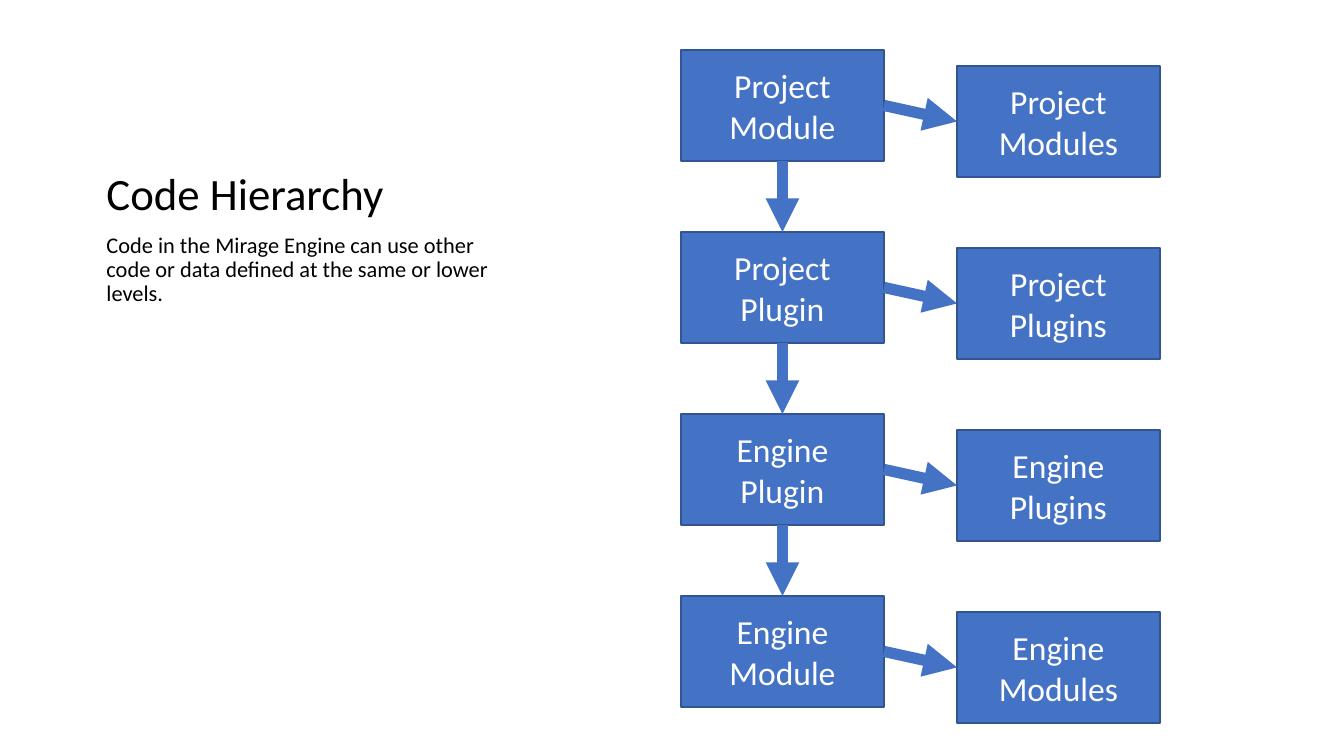
from dataclasses import dataclass

from pptx import Presentation
from pptx import util as u
from pptx.dml.color import RGBColor
from pptx.enum import shapes, text
from pptx.oxml.ns import qn
from pptx.shapes.autoshape import Shape
from pptx.slide import Slide
from pptx.text.text import _Paragraph as Paragraph

WIDTH, HEIGHT = 1344, 756
EMU_PER_PX = u.Inches(10) / WIDTH
COLORS = {"box": "4472C4", "border": "325491", "dark": "000000", "light": "FFFFFF"}
FONT = "Calibri"

# Diagram grid, in px
BOX_W, BOX_H = 203, 111
USER_X, USED_X = 681, 957
TOP, ROW_PITCH, USED_DROP = 50, 182, 16

# Connection sites of a rectangle
SITE_TOP, SITE_LEFT, SITE_BOTTOM, SITE_RIGHT = range(4)


@dataclass(frozen=True)
class Level:
    user: str
    used: str


LEVELS = [
    Level("Project Module", "Project Modules"),
    Level("Project Plugin", "Project Plugins"),
    Level("Engine Plugin", "Engine Plugins"),
    Level("Engine Module", "Engine Modules"),
]


def px(length: int) -> u.Emu:
    return u.Emu(round(length * EMU_PER_PX))


def rgb(name: str) -> RGBColor:
    return RGBColor.from_string(COLORS[name])


def style_text(paragraph: Paragraph, size: int, color: str, align: text.PP_ALIGN) -> None:
    paragraph.alignment = align
    paragraph.font.name = FONT
    paragraph.font.size = u.Pt(size)
    paragraph.font.bold = False
    paragraph.font.color.rgb = rgb(color)


def fill_placeholder(holder: Shape, wording: str, top: int, height: int,
                     size: int, anchor: text.MSO_ANCHOR) -> None:
    holder.left, holder.top = px(93), px(top)
    holder.width, holder.height = px(434), px(height)
    frame = holder.text_frame
    frame.text = wording
    frame.word_wrap = True
    frame.auto_size = text.MSO_AUTO_SIZE.NONE
    frame.vertical_anchor = anchor
    paragraph = frame.paragraphs[0]
    properties = paragraph._p.get_or_add_pPr()
    properties.set("marL", "0")
    properties.set("indent", "0")
    properties.append(properties.makeelement(qn("a:buNone"), {}))
    paragraph.line_spacing = 0.9
    paragraph.space_before = u.Pt(0)
    style_text(paragraph, size, "dark", text.PP_ALIGN.LEFT)


def add_box(slide: Slide, label: str, left: int, top: int) -> Shape:
    box = slide.shapes.add_shape(shapes.MSO_SHAPE.RECTANGLE,
                                 px(left), px(top), px(BOX_W), px(BOX_H))
    box.shadow.inherit = False
    box.fill.solid()
    box.fill.fore_color.rgb = rgb("box")
    box.line.color.rgb = rgb("border")
    box.line.width = u.Pt(1)
    frame = box.text_frame
    frame.text = label
    frame.word_wrap = True
    frame.vertical_anchor = text.MSO_ANCHOR.MIDDLE
    style_text(frame.paragraphs[0], 18, "light", text.PP_ALIGN.CENTER)
    return box


def add_arrow(slide: Slide, start: Shape, start_site: int, end: Shape, end_site: int) -> None:
    arrow = slide.shapes.add_connector(shapes.MSO_CONNECTOR.STRAIGHT, 0, 0, 0, 0)
    arrow.begin_connect(start, start_site)
    arrow.end_connect(end, end_site)
    arrow.line.color.rgb = rgb("box")
    arrow.line.width = u.Pt(6)
    line = arrow.line._get_or_add_ln()
    line.append(line.makeelement(qn("a:tailEnd"), {"type": "triangle"}))
    properties = arrow._element.spPr
    properties.append(properties.makeelement(qn("a:effectLst"), {}))


def main() -> None:
    deck = Presentation()
    deck.slide_width, deck.slide_height = px(WIDTH), px(HEIGHT)
    slide = deck.slides.add_slide(deck.slide_layouts.get_by_name("Title and Content"))

    # Title and explanation
    fill_placeholder(slide.shapes.title, "Code Hierarchy", 51, 176, 24,
                     text.MSO_ANCHOR.BOTTOM)
    fill_placeholder(
        slide.placeholders[1],
        "Code in the Mirage Engine can use other code or data defined "
        "at the same or lower levels.",
        227, 421, 12, text.MSO_ANCHOR.TOP)

    # Levels, each pointing at its peers and at the level below
    above = None
    for row, level in enumerate(LEVELS):
        top = TOP + row * ROW_PITCH
        user = add_box(slide, level.user, USER_X, top)
        used = add_box(slide, level.used, USED_X, top + USED_DROP)
        add_arrow(slide, user, SITE_RIGHT, used, SITE_LEFT)
        if above is not None:
            add_arrow(slide, above, SITE_BOTTOM, user, SITE_TOP)
        above = user

    deck.save("out.pptx")


if __name__ == "__main__":
    main()
